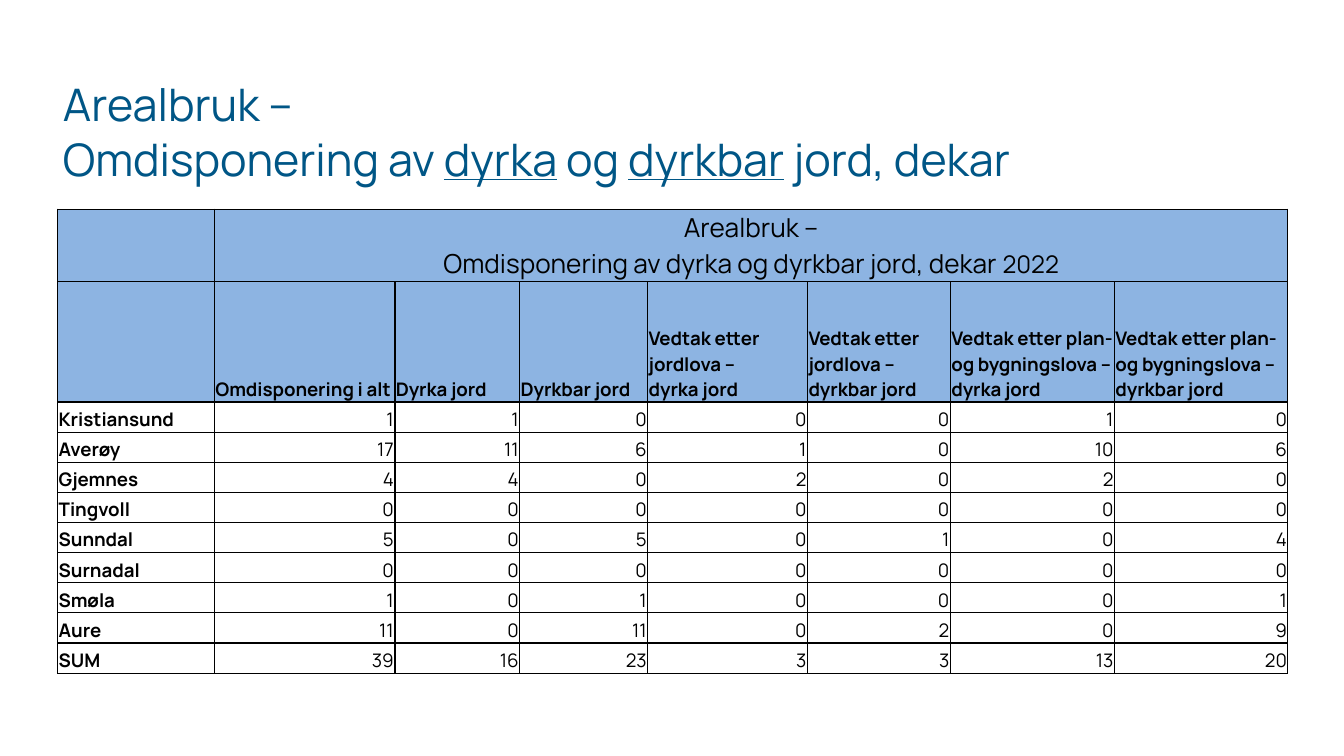
import dataclasses

import pptx
import pptx.dml.color
import pptx.enum.text
import pptx.oxml
import pptx.oxml.ns
import pptx.util
from pptx.util import Cm

ALIGN = pptx.enum.text.PP_ALIGN
ANCHOR = pptx.enum.text.MSO_ANCHOR


@dataclasses.dataclass(frozen=True)
class Theme:
    font: str = "Manrope"
    title_color: str = "005686"
    ink: str = "000000"
    header_fill: str = "8DB4E2"
    title_size: float = 24
    heading_size: float = 14
    year_size: float = 13
    body_size: float = 10
    thin: float = 0.5
    thick: float = 1


class SlideBuilder:
    def __init__(self, slide, theme):
        self.slide = slide
        self.theme = theme

    def paragraph(self, paragraph, lines, size, color, bold=False, align=ALIGN.LEFT):
        """Write lines of (text, font overrides) runs into one paragraph."""
        paragraph.alignment = align
        font = paragraph.font
        font.name, font.size, font.bold = self.theme.font, pptx.util.Pt(size), bold
        font.color.rgb = pptx.dml.color.RGBColor.from_string(color)
        for number, line in enumerate(lines):
            if number:
                paragraph.add_line_break()
            for text, overrides in line:
                run = paragraph.add_run()
                run.text = text
                for name, value in overrides.items():
                    setattr(run.font, name, value)
        # Line breaks carry their own size
        for line_break in paragraph._p.findall(pptx.oxml.ns.qn("a:br")):
            line_break.append(pptx.oxml.parse_xml(
                f'<a:rPr {pptx.oxml.ns.nsdecls("a")} sz="{int(size * 100)}"/>'))

    def title(self, lines, left, top, width, height):
        frame = self.slide.shapes.add_textbox(left, top, width, height).text_frame
        frame.word_wrap = True
        frame.vertical_anchor = ANCHOR.MIDDLE
        frame.margin_left = frame.margin_right = Cm(0.1)
        frame.margin_top = frame.margin_bottom = Cm(0.05)
        frame.paragraphs[0].line_spacing = 1.03
        self.paragraph(frame.paragraphs[0], lines, self.theme.title_size,
                       self.theme.title_color)

    def table(self, left, top, widths, heights):
        table = self.slide.shapes.add_table(
            len(heights), len(widths), left, top, sum(widths), sum(heights)).table
        table.first_row = table.horz_banding = False
        for column, width in zip(table.columns, widths):
            column.width = width
        for row, height in zip(table.rows, heights):
            row.height = height
        return table

    def cell_style(self, cell, borders, fill=None):
        """Set borders, given as widths by side, then fill, margins and anchor."""
        properties = cell._tc.get_or_add_tcPr()
        for side in "LRTB":
            properties.append(pptx.oxml.parse_xml(
                f'<a:ln{side} {pptx.oxml.ns.nsdecls("a")} w="{pptx.util.Pt(borders[side])}">'
                f'<a:solidFill><a:srgbClr val="{self.theme.ink}"/></a:solidFill>'
                f'</a:ln{side}>'))
        if fill:
            cell.fill.solid()
            cell.fill.fore_color.rgb = pptx.dml.color.RGBColor.from_string(fill)
        else:
            cell.fill.background()
        cell.margin_left = cell.margin_right = cell.margin_top = Cm(0.02)
        cell.margin_bottom = 0
        cell.vertical_anchor = ANCHOR.BOTTOM

    def cell_text(self, cell, paragraphs, bold=False, align=ALIGN.LEFT):
        frame = cell.text_frame
        for number, text in enumerate(paragraphs):
            paragraph = frame.add_paragraph() if number else frame.paragraphs[0]
            self.paragraph(paragraph, [[(text, {})]], self.theme.body_size,
                           self.theme.ink, bold, align)


COLUMN_HEADS = [
    ["Omdisponering i alt"],
    ["Dyrka jord"],
    ["Dyrkbar jord"],
    ["Vedtak etter jordlova –", "dyrka jord"],
    ["Vedtak etter jordlova –", "dyrkbar jord"],
    ["Vedtak etter plan- og bygningslova – dyrka jord"],
    ["Vedtak etter plan- og bygningslova –", "dyrkbar jord"],
]
MUNICIPALITIES = [
    ("Kristiansund", 1, 1, 0, 0, 0, 1, 0),
    ("Averøy", 17, 11, 6, 1, 0, 10, 6),
    ("Gjemnes", 4, 4, 0, 2, 0, 2, 0),
    ("Tingvoll", 0, 0, 0, 0, 0, 0, 0),
    ("Sunndal", 5, 0, 5, 0, 1, 0, 4),
    ("Surnadal", 0, 0, 0, 0, 0, 0, 0),
    ("Smøla", 1, 0, 1, 0, 0, 0, 1),
    ("Aure", 11, 0, 11, 0, 2, 0, 9),
    ("SUM", 39, 16, 23, 3, 3, 13, 20),
]
HEADER_ROWS = 2
THICK_ABOVE = {HEADER_ROWS, HEADER_ROWS + len(MUNICIPALITIES) - 1}
THICK_LEFT_OF = {2, 4}


def main():
    presentation = pptx.Presentation()
    presentation.slide_width, presentation.slide_height = Cm(25.4), Cm(14.29)
    theme = Theme()
    builder = SlideBuilder(
        presentation.slides.add_slide(presentation.slide_layouts[6]), theme)

    # Title
    underlined = {"underline": True}
    builder.title(
        [[("Arealbruk –", {})],
         [("Omdisponering av ", {}), ("dyrka", underlined), (" og ", {}),
          ("dyrkbar", underlined), (" jord, dekar", {})]],
        Cm(1.09), Cm(1.22), Cm(23.24), Cm(2.49))

    # Table grid: heavier rules around the body, the sum and two column groups
    widths = [Cm(w) for w in (2.96, 3.41, 2.36, 2.42, 3.02, 2.7, 3.1, 3.28)]
    heights = [Cm(1.37), Cm(2.28)] + [Cm(0.57)] * len(MUNICIPALITIES)
    land_use = builder.table(Cm(1.09), Cm(3.95), widths, heights)
    for row in range(len(heights)):
        for column in range(len(widths)):
            def weight(heavy):
                return theme.thick if heavy else theme.thin
            borders = {
                "L": weight(row and column in THICK_LEFT_OF),
                "R": weight(row and column + 1 in THICK_LEFT_OF),
                "T": weight(row in THICK_ABOVE),
                "B": weight(row + 1 in THICK_ABOVE),
            }
            builder.cell_style(land_use.cell(row, column), borders,
                               theme.header_fill if row < HEADER_ROWS else None)

    # Spanning heading
    heading = land_use.cell(0, 1)
    heading.merge(land_use.cell(0, len(widths) - 1))
    builder.paragraph(
        heading.text_frame.paragraphs[0],
        [[("Arealbruk –", {})],
         [("Omdisponering av dyrka og dyrkbar jord, dekar ", {}),
          ("2022", {"size": pptx.util.Pt(theme.year_size)})]],
        theme.heading_size, theme.ink, align=ALIGN.CENTER)

    # Column heads
    for column, head in enumerate(COLUMN_HEADS, 1):
        builder.cell_text(land_use.cell(1, column), head, bold=True)

    # Municipalities and sum
    for row, (municipality, *areas) in enumerate(MUNICIPALITIES, HEADER_ROWS):
        builder.cell_text(land_use.cell(row, 0), [municipality], bold=True)
        for column, area in enumerate(areas, 1):
            builder.cell_text(land_use.cell(row, column), [str(area)], align=ALIGN.RIGHT)

    presentation.save("out.pptx")


if __name__ == "__main__":
    main()
